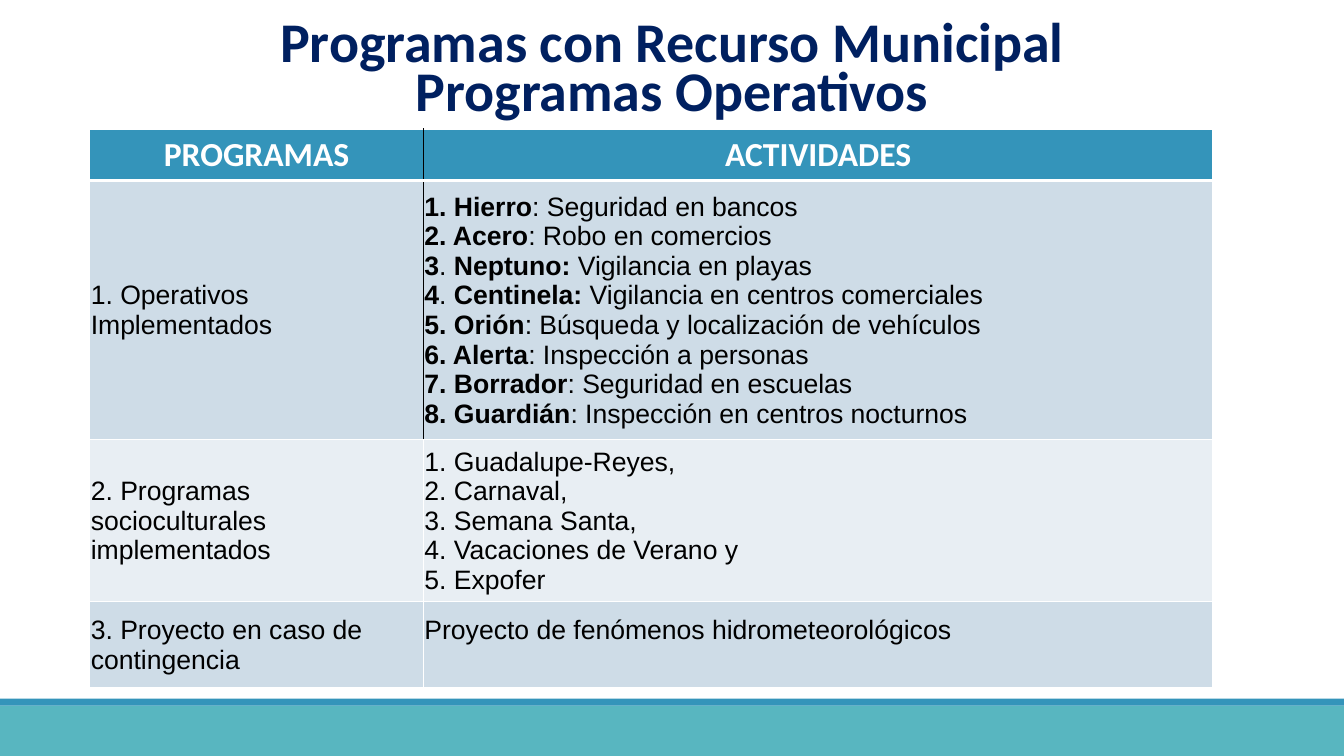
import pptx
import pptx.dml.color
import pptx.enum.shapes
import pptx.enum.text
import pptx.oxml
import pptx.oxml.ns
import pptx.util

ALIGN = pptx.enum.text.PP_ALIGN
NAVY, BLUE, TEAL = "002060", "3494BA", "58B6C0"
WHITE, BLACK, BAND, LIGHT = "FFFFFF", "000000", "CEDCE7", "E8EEF3"

OPERATIVOS = [
    "*1. Hierro*: Seguridad en bancos",
    "*2. Acero*: Robo en comercios",
    "*3*. *Neptuno: *Vigilancia en playas",
    "*4*. *Centinela: *Vigilancia en centros comerciales",
    "*5. Orión*: Búsqueda y localización de vehículos",
    "*6. Alerta*: Inspección a personas",
    "*7. Borrador*: Seguridad en escuelas",
    "*8. Guardián*: Inspección en centros nocturnos",
]
EVENTOS = [
    "1. Guadalupe-Reyes,",
    "2. Carnaval,",
    "3. Semana Santa,",
    "4. Vacaciones de Verano y",
    "5. Expofer",
]
ROWS = [
    (["PROGRAMAS"], ["ACTIVIDADES"]),
    (["1. Operativos Implementados"], OPERATIVOS),
    (["2. Programas socioculturales implementados"], EVENTOS),
    (["3. Proyecto en caso de contingencia"],
     ["Proyecto de fenómenos hidrometeorológicos"]),
]


def rgb(color):
    return pptx.dml.color.RGBColor.from_string(color)


def assign(target, values):
    for name, value in values.items():
        setattr(target, name, value)


class Deck:
    title = {"name": "Calibri", "size": pptx.util.Pt(40), "bold": True}
    header = {"name": "Calibri", "size": pptx.util.Pt(24), "bold": True}
    body = {"name": "Arial", "size": pptx.util.Pt(19), "bold": False}

    def __init__(self):
        self.prs = pptx.Presentation()
        self.prs.slide_width = pptx.util.Inches(13.33)
        self.prs.slide_height = pptx.util.Inches(7.5)
        self.s = self.prs.slides.add_slide(self.prs.slide_layouts[6])

    def x(self, percent):
        return round(self.prs.slide_width * percent / 100)

    def y(self, percent):
        return round(self.prs.slide_height * percent / 100)

    def box(self, left, top, width, height):
        return self.x(left), self.y(top), self.x(width), self.y(height)

    def bar(self, top, height, color):
        sp = self.s.shapes.add_shape(
            pptx.enum.shapes.MSO_SHAPE.RECTANGLE, *self.box(0, top, 100, height))
        sp.shadow.inherit = False
        sp.fill.solid()
        sp.fill.fore_color.rgb = rgb(color)
        sp.line.fill.background()

    def text(self, tf, lines, font, color, layout):
        tf.word_wrap = True
        for i, line in enumerate(lines):
            p = tf.add_paragraph() if i else tf.paragraphs[0]
            assign(p, layout)
            for j, part in enumerate(line.split("*")):
                if part:
                    r = p.add_run()
                    r.text = part
                    assign(r.font, font)
                    r.font.bold = font["bold"] or j % 2 == 1
                    r.font.color.rgb = rgb(color)

    def heading(self, lines, top, height):
        sp = self.s.shapes.add_textbox(*self.box(0, top, 100, height))
        self.text(sp.text_frame, lines, self.title, NAVY,
                  {"alignment": ALIGN.CENTER, "line_spacing": pptx.util.Pt(35)})

    def border(self, cell, side, color, points):
        cell._tc.get_or_add_tcPr().append(pptx.oxml.parse_xml(
            f'<a:ln{side} {pptx.oxml.ns.nsdecls("a")} w="{pptx.util.Pt(points)}">'
            f'<a:solidFill><a:srgbClr val="{color}"/></a:solidFill></a:ln{side}>'))

    def cell(self, cell, lines, row, col):
        head = row == 0
        divider = BLACK if row < 2 else WHITE
        edges = {
            "L": (divider if col == 1 else WHITE, 1),
            "R": (divider if col == 0 else WHITE, 1),
            "T": (WHITE, 3 if row == 1 else 1),
            "B": (WHITE, 3 if head else 1),
        }
        for side, edge in edges.items():
            self.border(cell, side, *edge)
        cell.fill.solid()
        cell.fill.fore_color.rgb = rgb(BLUE if head else BAND if row % 2 else LIGHT)
        cell.vertical_anchor = pptx.enum.text.MSO_ANCHOR.MIDDLE
        if not head:
            inset = pptx.util.Inches(0.01)
            assign(cell, {"margin_left": inset, "margin_right": inset,
                          "margin_top": inset, "margin_bottom": 0})
        self.text(cell.text_frame, lines, self.header if head else self.body,
                  WHITE if head else BLACK,
                  {"alignment": ALIGN.CENTER if head else ALIGN.LEFT})

    def table(self, rows, left, top, widths, heights):
        frame = self.s.shapes.add_table(
            len(rows), len(widths), *self.box(left, top, sum(widths), sum(heights)))
        table = frame.table
        for column, width in zip(table.columns, widths):
            column.width = self.x(width)
        for i, (row, height) in enumerate(zip(rows, heights)):
            table.rows[i].height = self.y(height)
            for j, lines in enumerate(row):
                self.cell(table.cell(i, j), lines, i, j)
        return table


def main():
    deck = Deck()
    deck.bar(93.33, 6.67, TEAL)
    deck.bar(92.4, 0.93, BLUE)
    deck.heading(["Programas con Recurso Municipal", "Programas Operativos"], 2.67, 14.4)
    table = deck.table(ROWS, 6.68, 17.07, [24.83, 58.74], [6.8, 34.27, 21.47, 11.33])
    table.cell(3, 1).margin_bottom = pptx.util.Inches(0.29)
    deck.prs.save("out.pptx")


if __name__ == "__main__":
    main()
